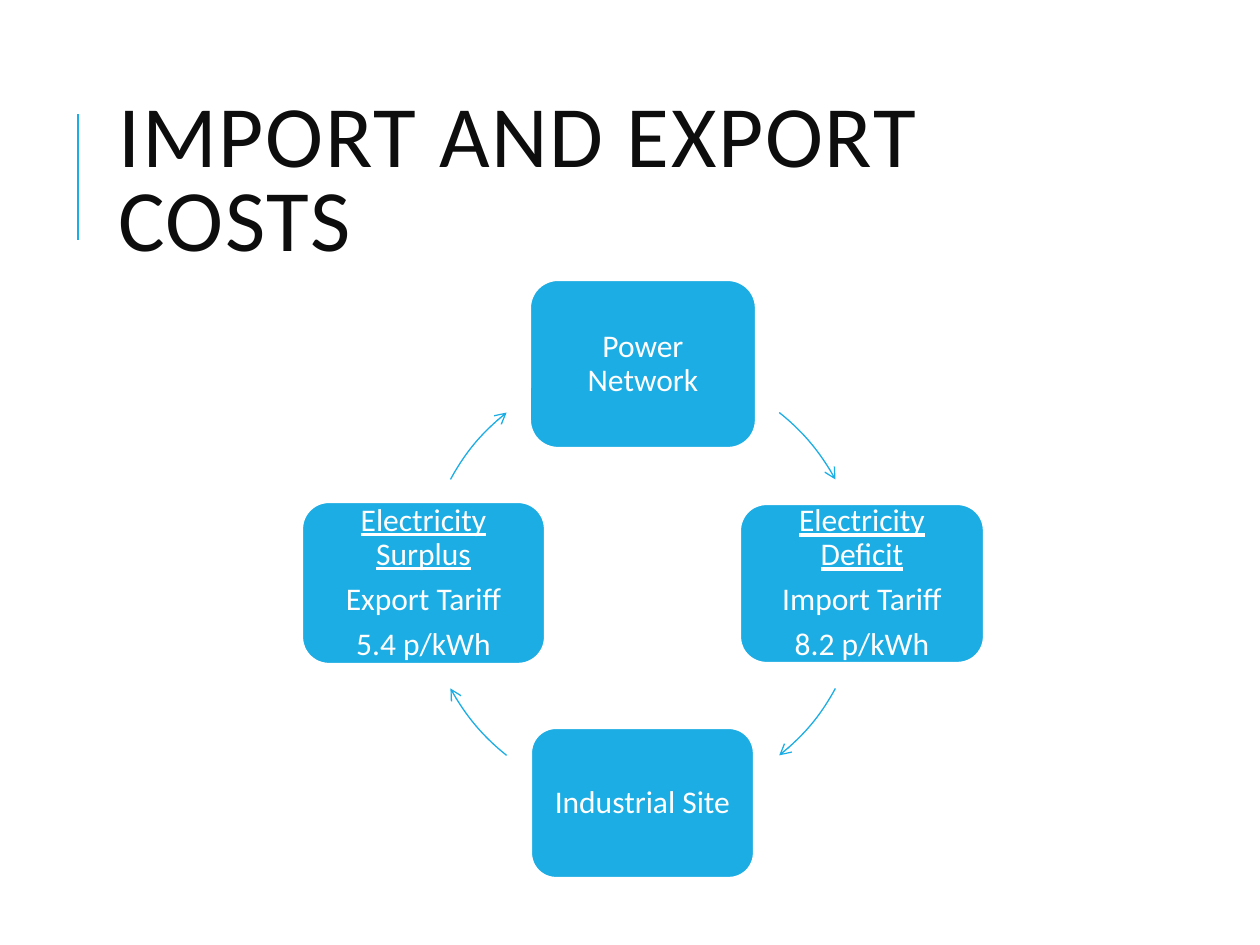
"""Build the import and export costs slide with its four-step energy cycle."""
from dataclasses import dataclass

from lxml import etree
from pptx import Presentation
from pptx.dml.color import RGBColor
from pptx.enum.shapes import MSO_CONNECTOR, MSO_SHAPE
from pptx.enum.text import MSO_ANCHOR, PP_ALIGN
from pptx.oxml.ns import qn
from pptx.util import Emu, Pt

ROUNDED = MSO_SHAPE.ROUNDED_RECTANGLE
ARC = MSO_SHAPE.ARC
STRAIGHT = MSO_CONNECTOR.STRAIGHT
MIDDLE = MSO_ANCHOR.MIDDLE
CENTER = PP_ALIGN.CENTER
EMU_PER_PX = 914400 / 126


@dataclass(frozen=True)
class Theme:
    font: str = "Calibri"
    accent: RGBColor = RGBColor(0x1C, 0xAD, 0xE4)
    ink: RGBColor = RGBColor(0x0D, 0x0D, 0x0D)
    paper: RGBColor = RGBColor(0xFF, 0xFF, 0xFF)
    title_size: int = 50
    label_size: int = 18
    label_gap: float = 6.3


@dataclass(frozen=True)
class Frame:
    left: int
    top: int
    width: int
    height: int


@dataclass(frozen=True)
class Label:
    text: str
    underline: bool = False


@dataclass(frozen=True)
class Step:
    frame: Frame
    labels: tuple[Label, ...]
    arrow_angle: int


THEME = Theme()
PAGE_SIZE = (1260, 945)
TITLE_FRAME = Frame(106, 81, 1004, 207)
CYCLE_FRAME = Frame(424, 365, 438, 438)
ARROW_SWEEP = 23
LABEL_INSET = 9
STEPS = (
    Step(Frame(530, 280, 226, 168), (Label("Power Network"),), 320),
    Step(
        Frame(740, 504, 244, 159),
        (Label("Electricity Deficit", True), Label("Import Tariff"), Label("8.2 p/kWh")),
        40,
    ),
    Step(Frame(531, 728, 223, 150), (Label("Industrial Site"),), 140),
    Step(
        Frame(302, 502, 243, 162),
        (Label("Electricity Surplus", True), Label("Export Tariff"), Label("5.4 p/kWh")),
        220,
    ),
)


def px(value: int) -> Emu:
    """Turn pixels into EMU."""
    return Emu(round(value * EMU_PER_PX))


def place(frame: Frame) -> tuple[Emu, ...]:
    """Give the position and size of a frame in EMU."""
    return px(frame.left), px(frame.top), px(frame.width), px(frame.height)


def add_span(para, text: str, size: int, color: RGBColor):
    """Append one styled run to a paragraph."""
    span = para.add_run()
    span.text = text
    span.font.name = THEME.font
    span.font.size = Pt(size)
    span.font.color.rgb = color
    return span


def draw_title(page) -> None:
    """Draw the heading and the accent rule beside it."""
    rule = page.shapes.add_connector(STRAIGHT, px(78), px(240), px(78), px(114))
    rule.line.color.rgb = THEME.accent
    rule.line.width = Pt(1.5)
    etree.SubElement(rule._element.spPr, qn("a:effectLst"))
    box = page.shapes.add_textbox(*place(TITLE_FRAME))
    box.text_frame.word_wrap = True
    box.text_frame.vertical_anchor = MIDDLE
    para = box.text_frame.paragraphs[0]
    para.line_spacing = 0.8
    span = add_span(para, "IMPORT AND EXPORT COSTS", THEME.title_size, THEME.ink)
    span.font._element.set("spc", "100")


def draw_step(page, step: Step) -> None:
    """Draw one rounded box with its centred labels."""
    box = page.shapes.add_shape(ROUNDED, *place(step.frame))
    box.shadow.inherit = False
    box.fill.solid()
    box.fill.fore_color.rgb = THEME.accent
    box.line.color.rgb = THEME.paper
    box.line.width = Pt(1.25)
    body = box.text_frame
    body.word_wrap = True
    body.vertical_anchor = MIDDLE
    body.margin_left = body.margin_right = px(LABEL_INSET)
    body.margin_top = body.margin_bottom = px(LABEL_INSET)
    for index, label in enumerate(step.labels):
        para = body.add_paragraph() if index else body.paragraphs[0]
        para.alignment = CENTER
        para.line_spacing = 0.9
        para.space_after = Pt(THEME.label_gap)
        span = add_span(para, label.text, THEME.label_size, THEME.paper)
        span.font.underline = label.underline


def draw_arrow(page, angle: int) -> None:
    """Draw a clockwise arrow on the cycle, centred on an angle in degrees."""
    arrow = page.shapes.add_shape(ARC, *place(CYCLE_FRAME))
    arrow.shadow.inherit = False
    arrow.adjustments[0] = (angle - ARROW_SWEEP / 2) * 0.6
    arrow.adjustments[1] = (angle + ARROW_SWEEP / 2) * 0.6
    arrow.fill.background()
    arrow.line.color.rgb = THEME.accent
    arrow.line.width = Pt(0.75)
    etree.SubElement(arrow.line._get_or_add_ln(), qn("a:tailEnd"), type="arrow")


def main() -> None:
    """Build and save the deck."""
    deck = Presentation()
    deck.slide_width, deck.slide_height = map(px, PAGE_SIZE)
    page = deck.slides.add_slide(deck.slide_layouts[6])
    draw_title(page)
    for step in STEPS:
        draw_step(page, step)
        draw_arrow(page, step.arrow_angle)
    deck.save("out.pptx")


if __name__ == "__main__":
    main()
